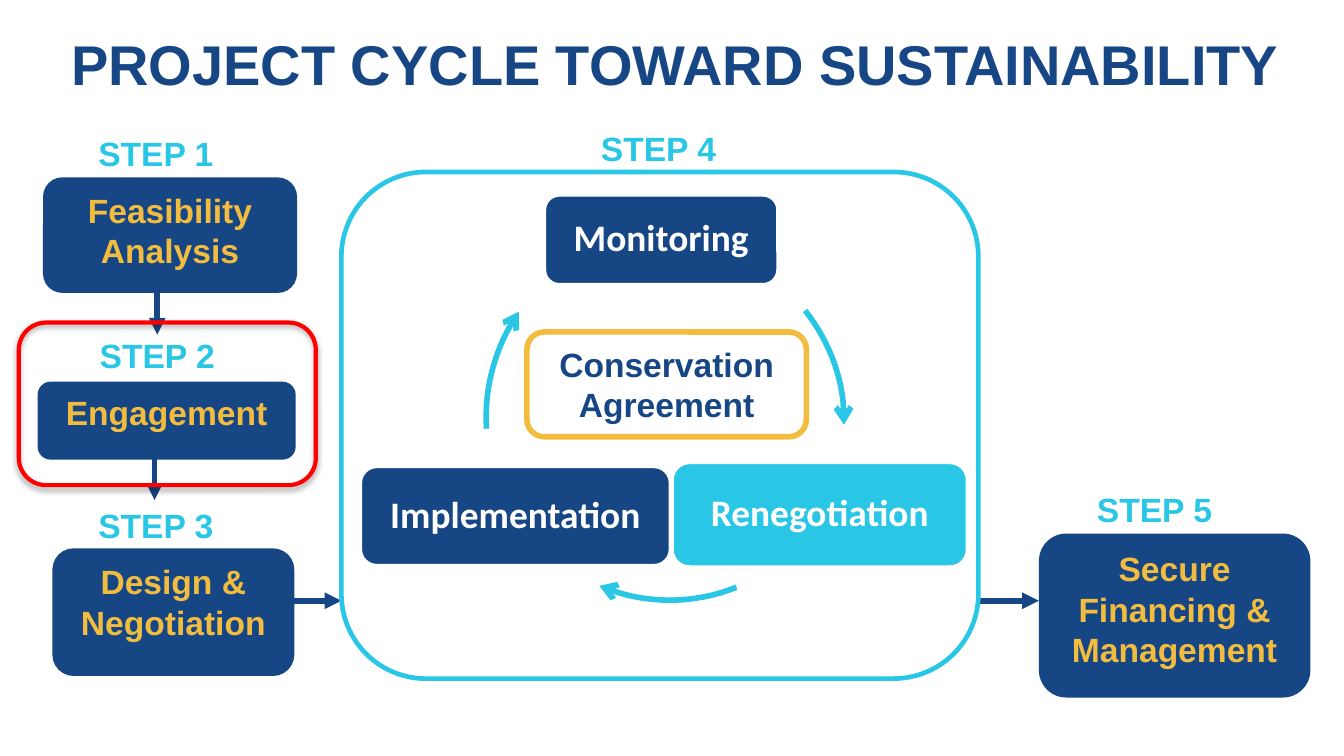
from dataclasses import dataclass
from typing import Optional

import pptx
import pptx.dml.color
import pptx.enum.shapes
import pptx.enum.text
import pptx.oxml.ns
import pptx.util
from lxml import etree

COLORS = {
    "navy": "174685", "cyan": "29C7E5", "gold": "F2BD3E",
    "white": "FFFFFF", "red": "FF0000", "black": "000000",
}
# The slide is a grid of 100 columns by 56.25 rows of square cells
COLUMNS, ROWS = 100, 56.25
CELL = pptx.util.Inches(0.1)
ROUNDING = 0.167
CURVE_SEGMENTS = 16

Point = tuple[float, float]
Area = tuple[float, float, float, float]  # column, row, columns wide, rows high


@dataclass
class Box:
    area: Area
    text: str = ""
    fill: Optional[str] = None
    line: Optional[str] = None
    weight: float = 0
    ink: str = "gold"
    font: str = "Arial"
    size: float = 18
    middle: bool = False
    spacing: float = 1.0


@dataclass
class Label:
    number: int
    column: float
    row: float
    width: float = 14.4


@dataclass
class Arrow:
    start: Point
    end: Point


@dataclass
class Curve:
    start: Point
    control_1: Point
    control_2: Point
    end: Point


def cells(*amounts: float) -> list[int]:
    return [round(amount * CELL) for amount in amounts]


def rgb(name: str) -> pptx.dml.color.RGBColor:
    return pptx.dml.color.RGBColor.from_string(COLORS[name])


def add_child(parent, tag: str, **attributes: str):
    return etree.SubElement(parent, pptx.oxml.ns.qn(tag), **attributes)


def write(frame, text: str, ink: str, size: float, font: str = "Arial",
          spacing: float = 1.0) -> None:
    frame.word_wrap = True
    paragraph = frame.paragraphs[0]
    paragraph.text = text
    paragraph.alignment = pptx.enum.text.PP_ALIGN.CENTER
    paragraph.line_spacing = spacing
    paragraph.font.name = font
    paragraph.font.size = pptx.util.Pt(size)
    paragraph.font.bold = True
    paragraph.font.color.rgb = rgb(ink)


def set_line(shape, color: str, weight: float, head: str = "") -> None:
    shape.line.color.rgb = rgb(color)
    shape.line.width = pptx.util.Pt(weight)
    if head:
        outline = shape.element.spPr.find(pptx.oxml.ns.qn("a:ln"))
        add_child(outline, "a:tailEnd", type=head)


def draw_box(slide, box: Box):
    shape = slide.shapes.add_shape(
        pptx.enum.shapes.MSO_SHAPE.ROUNDED_RECTANGLE, *cells(*box.area))
    shape.adjustments[0] = ROUNDING
    shape.shadow.inherit = False
    if box.fill:
        shape.fill.solid()
        shape.fill.fore_color.rgb = rgb(box.fill)
    else:
        shape.fill.background()
    if box.line:
        set_line(shape, box.line, box.weight)
    else:
        shape.line.fill.background()
    if box.text:
        write(shape.text_frame, box.text, box.ink, box.size, box.font, box.spacing)
        anchors = pptx.enum.text.MSO_ANCHOR
        shape.text_frame.vertical_anchor = anchors.MIDDLE if box.middle else anchors.TOP
    return shape


def draw_label(slide, label: Label) -> None:
    area = cells(label.column, label.row, label.width, 3.3)
    write(slide.shapes.add_textbox(*area).text_frame, f"STEP {label.number}", "cyan", 18)


def draw_arrow(slide, arrow: Arrow) -> None:
    connector = slide.shapes.add_connector(
        pptx.enum.shapes.MSO_CONNECTOR.STRAIGHT, *cells(*arrow.start, *arrow.end))
    set_line(connector, "navy", 3, "triangle")
    add_child(connector.element.spPr, "a:effectLst")


def point_on(curve: Curve, t: float) -> list[int]:
    u = 1 - t
    weights = (u ** 3, 3 * u * u * t, 3 * u * t * t, t ** 3)
    knots = (curve.start, curve.control_1, curve.control_2, curve.end)
    return cells(*(sum(w * k[axis] for w, k in zip(weights, knots)) for axis in (0, 1)))


def draw_curve(slide, curve: Curve) -> None:
    builder = slide.shapes.build_freeform(*cells(*curve.start))
    builder.add_line_segments(
        [point_on(curve, i / CURVE_SEGMENTS) for i in range(1, CURVE_SEGMENTS + 1)],
        close=False)
    shape = builder.convert_to_shape()
    shape.shadow.inherit = False
    shape.fill.background()
    set_line(shape, "cyan", 3, "arrow")


def cycle_box(area: Area, text: str, fill: str) -> Box:
    return Box(area, text, fill, "white", 2, "white", "Calibri", 20, True, 0.9)


def add_soft_shadow(shape) -> None:
    effects = shape.element.spPr.find(pptx.oxml.ns.qn("a:effectLst"))
    shadow = add_child(effects, "a:outerShdw", blurRad=str(pptx.util.Pt(3.1)),
                       dist=str(pptx.util.Pt(1.8)), dir="5400000", rotWithShape="0")
    color = add_child(shadow, "a:srgbClr", val=COLORS["black"])
    add_child(color, "a:alpha", val="35000")


CYCLE_STAGES = [
    cycle_box((40.5, 14.5, 17.4, 6.7), "Monitoring", "navy"),
    cycle_box((50, 34.4, 22, 7.8), "Renegotiation", "cyan"),
    cycle_box((26.8, 34.7, 23.1, 7.4), "Implementation", "navy"),
]
CYCLE_CURVES = [
    Curve((59.9, 23.1), (61.8, 25.5), (62.9, 28.5), (62.8, 31.6)),
    Curve((54.8, 43.7), (51.6, 45), (47.9, 45), (44.6, 43.6)),
    Curve((36.2, 31.9), (36, 28.8), (36.9, 25.7), (38.6, 23.2)),
]
STEP_ARROWS = [
    Arrow((72.9, 44.7), (77.3, 44.7)),
    Arrow((19.1, 44.7), (25.4, 44.7)),
    Arrow((11.7, 21.6), (11.7, 24.9)),
    Arrow((11.5, 33), (11.5, 37.2)),
]
STEP_BOXES = [
    Box((25.4, 12.8, 47.4, 37.7), line="cyan", weight=2.5),
    Box((39.2, 24.7, 20.8, 7.8), "Conservation Agreement",
        line="gold", weight=3, ink="navy"),
    Box((3.2, 13.2, 18.9, 8.6), "Feasibility Analysis", "navy"),
    Box((2.8, 28.4, 19.2, 5.8), "Engagement", "navy"),
    Box((3.9, 40.8, 18, 9.5), "Design & Negotiation", "navy"),
    Box((77.3, 39.7, 20.2, 12.2), "Secure Financing & Management", "navy"),
]
STEP_LABELS = [
    Label(1, 4.4, 9.4), Label(2, 4.4, 24.4, 14.6), Label(3, 4.4, 37.1),
    Label(4, 41.8, 9), Label(5, 78.7, 35.9),
]
CURRENT_STEP = Box((1.4, 24, 22.1, 12.1), line="red", weight=2.25)


def main() -> None:
    deck = pptx.Presentation()
    deck.slide_width, deck.slide_height = cells(COLUMNS, ROWS)
    slide = deck.slides.add_slide(deck.slide_layouts[5])

    # Title
    title = slide.shapes.title
    title.left, title.top, title.width, title.height = cells(2.5, 2.8, 95.5, 3.8)
    write(title.text_frame, "PROJECT CYCLE TOWARD SUSTAINABILITY", "navy", 30)
    title.text_frame.auto_size = pptx.enum.text.MSO_AUTO_SIZE.NONE
    title.text_frame.vertical_anchor = pptx.enum.text.MSO_ANCHOR.MIDDLE

    # Cycle inside step 4
    for stage in CYCLE_STAGES:
        draw_box(slide, stage)
    for curve in CYCLE_CURVES:
        draw_curve(slide, curve)

    # Steps, with the arrows running behind them
    for arrow in STEP_ARROWS:
        draw_arrow(slide, arrow)
    for box in STEP_BOXES:
        draw_box(slide, box)
    for label in STEP_LABELS:
        draw_label(slide, label)

    # Highlight around the current step
    add_soft_shadow(draw_box(slide, CURRENT_STEP))
    deck.save("out.pptx")


if __name__ == "__main__":
    main()
